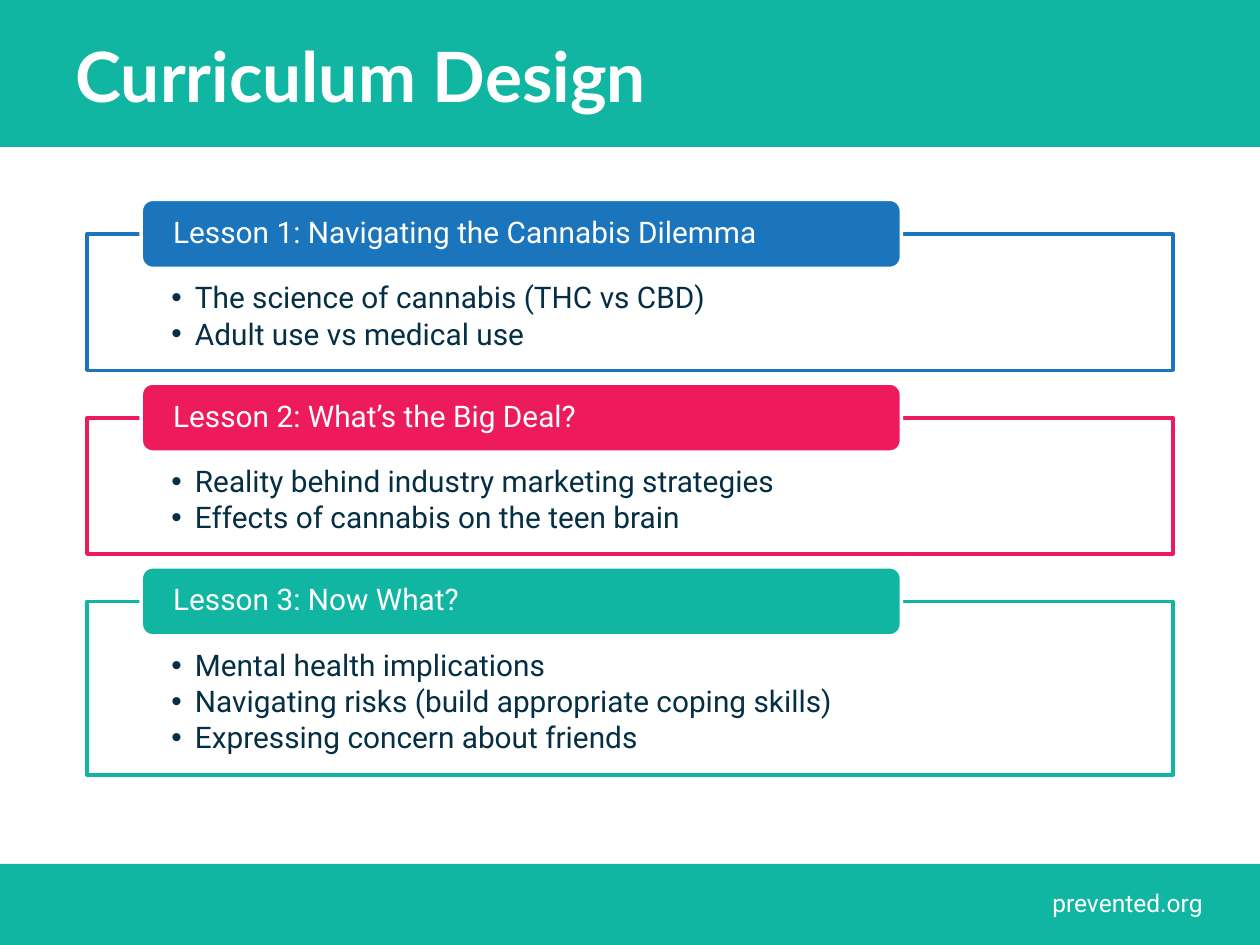
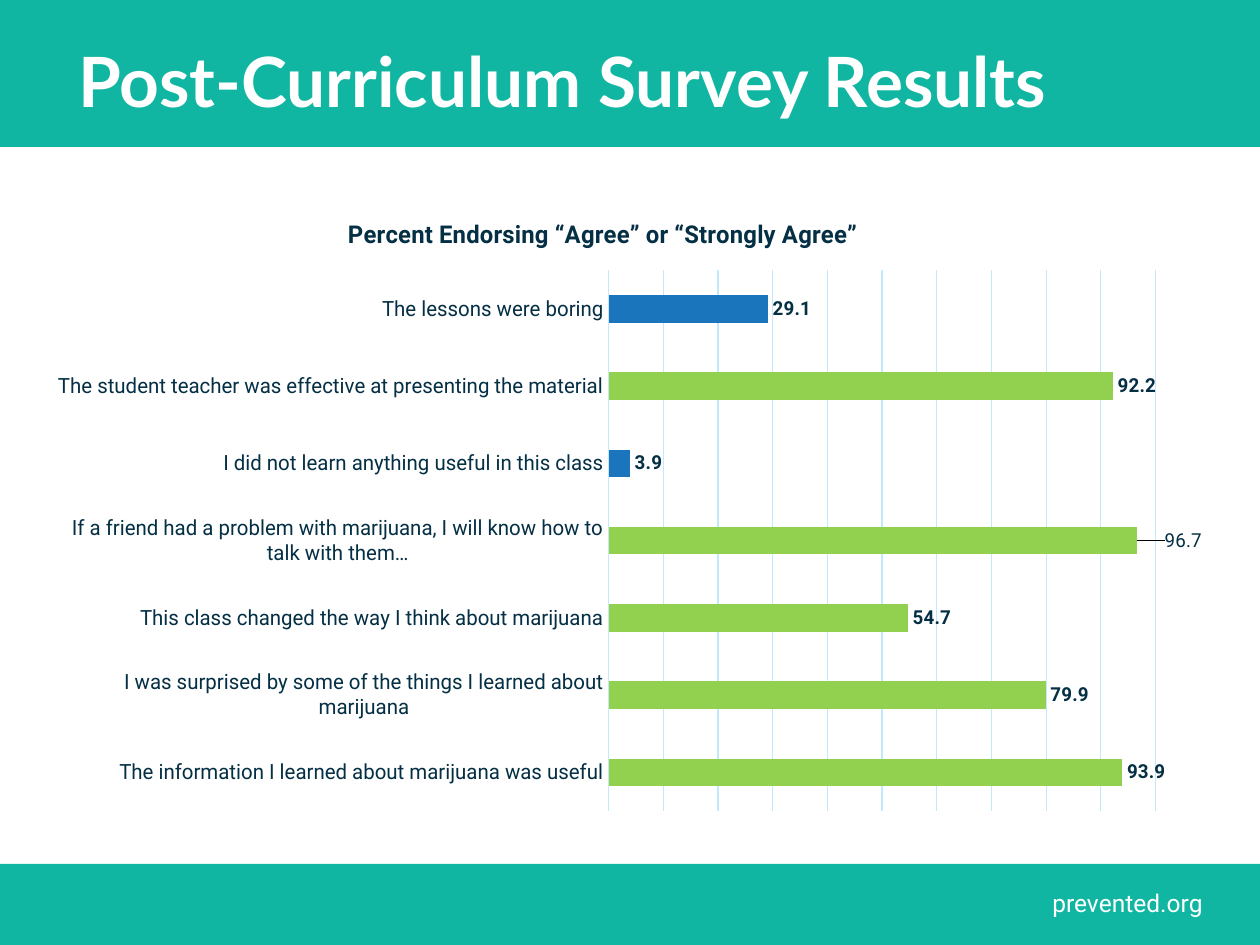
import lxml.etree
import pptx
import pptx.chart.data
import pptx.dml.color
import pptx.enum.chart
import pptx.enum.shapes
import pptx.enum.text
import pptx.oxml
import pptx.oxml.ns
import pptx.util

Pt = pptx.util.Pt
qn = pptx.oxml.ns.qn
SHAPE = pptx.enum.shapes.MSO_SHAPE
ALIGN = pptx.enum.text.PP_ALIGN
ANCHOR = pptx.enum.text.MSO_ANCHOR

WIDE, HIGH = 720, 540
HEAD, BODY = "Lato", "Roboto"
COLORS = {
    "teal": "10B6A1", "blue": "1B75BC", "pink": "ED1A5C", "green": "92D050",
    "ink": "042F44", "pale": "C1E8FB", "white": "FFFFFF",
}

LESSONS = [
    ("blue", "Lesson 1: Navigating the Cannabis Dilemma",
     ["The science of cannabis (THC vs CBD)", "Adult use vs medical use"]),
    ("pink", "Lesson 2: What’s the Big Deal?",
     ["Reality behind industry marketing strategies",
      "Effects of cannabis on the teen brain"]),
    ("teal", "Lesson 3: Now What?",
     ["Mental health implications",
      "Navigating risks (build appropriate coping skills)",
      "Expressing concern about friends"]),
]

# Bars from bottom to top
SURVEY = [
    ("The information I learned about marijuana was useful", 93.9, "green"),
    ("I was surprised by some of the things I learned about marijuana", 79.9, "green"),
    ("This class changed the way I think about marijuana", 54.7, "green"),
    ("If a friend had a problem with marijuana, I will know how to talk with them…",
     96.7, "green"),
    ("I did not learn anything useful in this class", 3.9, "blue"),
    ("The student teacher was effective at presenting the material", 92.2, "green"),
    ("The lessons were boring", 29.1, "blue"),
]

# Chart setting that turns leader lines off
NO_LEADS = (
    '<c:extLst %s><c:ext uri="{CE6537A1-D6FC-4f65-9D91-7224C49458BB}"'
    ' xmlns:c15="http://schemas.microsoft.com/office/drawing/2012/chart">'
    '<c15:showLeaderLines val="0"/></c:ext></c:extLst>'
    % pptx.oxml.ns.nsdecls("c"))


def tint(name):
    return pptx.dml.color.RGBColor.from_string(COLORS[name])


def style(font, size, color, bold=False, face=BODY):
    font.name, font.size, font.bold = face, Pt(size), bold
    font.color.rgb = tint(color)


def write(para, text, *look, **more):
    run = para.add_run()
    run.text = text
    style(run.font, *look, **more)


def inset(frame, left, top, right, base):
    frame.margin_left, frame.margin_top = Pt(left), Pt(top)
    frame.margin_right, frame.margin_bottom = Pt(right), Pt(base)


def panel(slide, kind, box, fill, line=None):
    shape = slide.shapes.add_shape(kind, *map(Pt, box))
    shape.shadow.inherit = False
    shape.fill.solid()
    shape.fill.fore_color.rgb = tint(fill)
    if line:
        shape.line.color.rgb = tint(line)
        shape.line.width = Pt(2)
    else:
        shape.line.fill.background()
    shape.text_frame.word_wrap = True
    return shape


# Bands and footer, kept on the shared layout
def frame_page(slide, layout):
    parts = [panel(slide, SHAPE.RECTANGLE, box, "teal")
             for box in [(0, 0, WIDE, 84), (0, 493.7, WIDE, HIGH - 493.7)]]
    foot = slide.shapes.add_textbox(Pt(526.3), Pt(504), Pt(168), Pt(24.5))
    foot.text_frame.word_wrap = True
    para = foot.text_frame.paragraphs[0]
    para.alignment = ALIGN.RIGHT
    write(para, "prevented.org", 14, "white")
    for part in parts + [foot]:
        layout.shapes.element.append(part.element)


def add_title(slide, text, box):
    title = slide.shapes.title
    title.left, title.top, title.width, title.height = map(Pt, box)
    frame = title.text_frame
    frame.auto_size = pptx.enum.text.MSO_AUTO_SIZE.NONE
    frame.vertical_anchor = ANCHOR.TOP
    inset(frame, 7.2, 3.6, 7.2, 3.6)
    para = frame.paragraphs[0]
    para.alignment = ALIGN.LEFT
    write(para, text, 39.6, "white", bold=True, face=HEAD)


def add_point(para, text):
    props = para._p.get_or_add_pPr()
    props.set("marL", str(Pt(13.5)))
    props.set("indent", str(-Pt(13.5)))
    lxml.etree.SubElement(props, qn("a:buFont"), typeface="Arial")
    lxml.etree.SubElement(props, qn("a:buChar"), char="•")
    para.alignment = ALIGN.LEFT
    para.line_spacing = 0.9
    para.space_after = Pt(2.2)
    write(para, text, 17, "ink")


# One lesson: outlined list with a tab on its upper edge
def add_lesson(slide, box, color, name, points):
    left, top, width, _ = box
    card = panel(slide, SHAPE.RECTANGLE, box, "white", color)
    frame = card.text_frame
    frame.vertical_anchor = ANCHOR.TOP
    inset(frame, 48.2, 28.1, 48.2, 9.4)
    for num, text in enumerate(points):
        para = frame.add_paragraph() if num else frame.paragraphs[0]
        add_point(para, text)

    tab = panel(slide, SHAPE.ROUNDED_RECTANGLE,
                (left + 31, top - 19.9, 0.7 * width, 39.5), color, "white")
    frame = tab.text_frame
    frame.vertical_anchor = ANCHOR.MIDDLE
    inset(frame, 16.3, 0, 16.3, 0)
    para = frame.paragraphs[0]
    para.alignment = ALIGN.LEFT
    para.line_spacing = 0.9
    write(para, name, 17, "white")


def add_plan(slide, box):
    left, top, width, gap = box
    for color, name, points in LESSONS:
        height = 35 + 21.4 * len(points)
        add_lesson(slide, (left, top, width, height), color, name, points)
        top += height + gap


# Manual layout of a chart part
def place(part, index, **spots):
    old = part.find(qn("c:layout"))
    if old is not None:
        part.remove(old)
    layout = pptx.oxml.parse_xml(
        '<c:layout %s><c:manualLayout/></c:layout>' % pptx.oxml.ns.nsdecls("c"))
    for tag, val in spots.items():
        lxml.etree.SubElement(layout[0], qn("c:" + tag), val=str(val))
    part.insert(index, layout)


def add_survey(slide, box):
    width, height = box[2:]
    data = pptx.chart.data.CategoryChartData(number_format="0.0")
    names, vals, colors = zip(*SURVEY)
    data.categories = names
    data.add_series("Series 1", vals)
    enum = pptx.enum.chart
    chart = slide.shapes.add_chart(
        enum.XL_CHART_TYPE.BAR_CLUSTERED, *map(Pt, box), data).chart
    style(chart.font, 10, "ink")
    chart.has_legend = False

    # Heading and plot area
    chart.has_title = True
    title = chart.chart_title
    write(title.text_frame.paragraphs[0],
          "Percent Endorsing “Agree” or “Strongly Agree”", 14, "ink", bold=True)
    place(title.element, 1, xMode="edge", yMode="edge",
          x=167 / width, y=13.5 / height)
    place(chart.element.find(".//" + qn("c:plotArea")), 0,
          layoutTarget="inner", xMode="edge", yMode="edge",
          x=322.5 / width, y=46.5 / height, w=321 / width, h=309 / height)

    # Axes
    cat, val = chart.category_axis, chart.value_axis
    cat.major_tick_mark = enum.XL_TICK_MARK.NONE
    style(cat.tick_labels.font, 12, "ink")
    val.visible = False
    val.minimum_scale, val.maximum_scale, val.major_unit = 0, 100, 10
    val.has_major_gridlines = True
    for line in (cat.format.line, val.major_gridlines.format.line):
        line.color.rgb = tint("pale")
        line.width = Pt(0.75)

    # Bars and their labels
    plot = chart.plots[0]
    plot.gap_width = 182
    plot.vary_by_categories = False
    bars = plot.series[0]
    bars.format.fill.solid()
    bars.format.fill.fore_color.rgb = tint("teal")
    for num, color in enumerate(colors):
        fill = bars.points[num].format.fill
        fill.solid()
        fill.fore_color.rgb = tint(color)
    labels = bars.data_labels
    labels.show_value = True
    labels.number_format, labels.number_format_is_linked = "0.0", False
    labels.position = enum.XL_LABEL_POSITION.OUTSIDE_END
    style(labels.font, 11, "ink", bold=True)

    # The friend label is lighter and stands further out
    label = bars.points[3].data_label
    style(label.font, 11, "ink")
    label.position = enum.XL_LABEL_POSITION.OUTSIDE_END
    mark = chart.element.find(".//" + qn("c:dLbl"))
    place(mark, 1, x=0.02, y=0)
    mark.getparent().append(pptx.oxml.parse_xml(NO_LEADS))


def main():
    deck = pptx.Presentation()
    deck.slide_width, deck.slide_height = Pt(WIDE), Pt(HIGH)
    layout = deck.slide_layouts[5]

    plan = deck.slides.add_slide(layout)
    frame_page(plan, layout)
    add_title(plan, "Curriculum Design", (36, 15.5, 648, 56.2))
    add_plan(plan, (49.7, 133.8, 620.6, 27.2))

    survey = deck.slides.add_slide(layout)
    add_title(survey, "Post-Curriculum Survey Results", (37.4, 18, 650, 51))
    add_survey(survey, (33.1, 108, 653.8, 363.6))

    deck.save("out.pptx")


if __name__ == "__main__":
    main()
